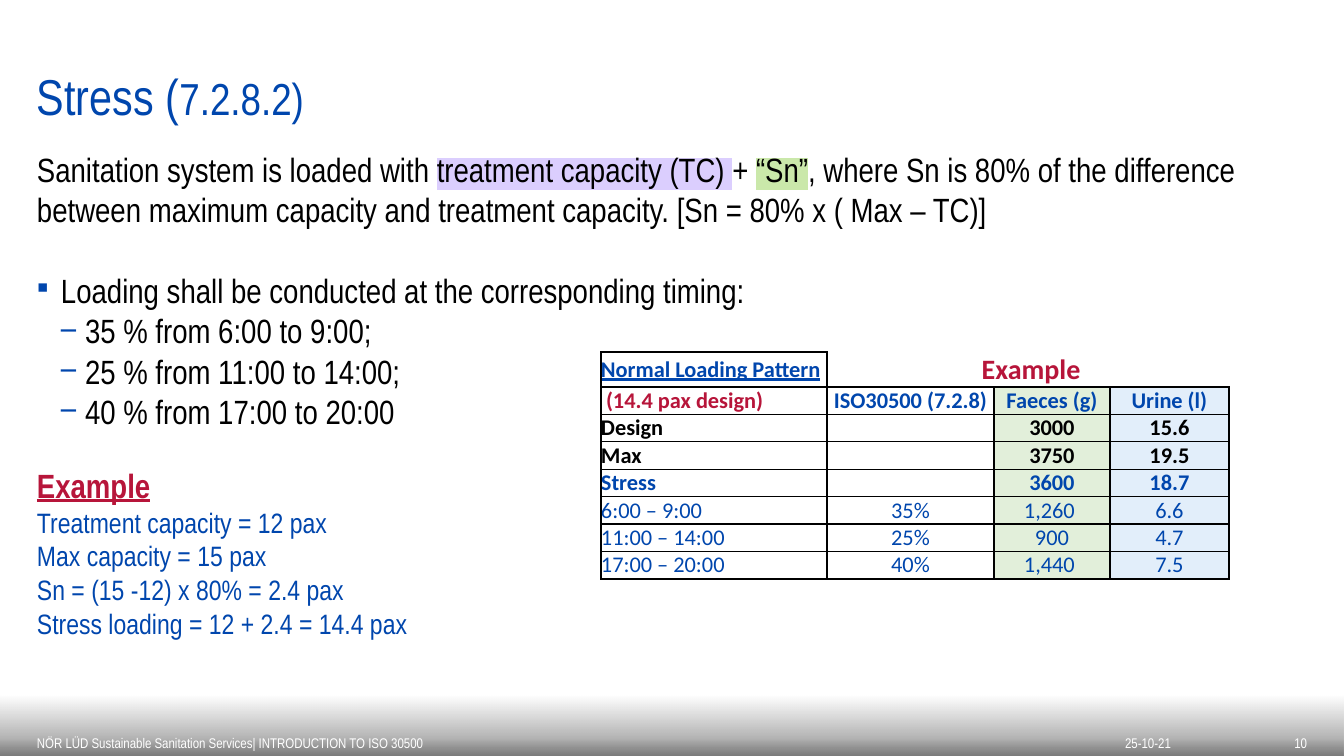
from lxml.etree import SubElement as Sub
from pptx import Presentation
from pptx.dml.color import RGBColor as RGB
from pptx.enum.shapes import MSO_SHAPE as Shape
from pptx.enum.text import MSO_ANCHOR as Anchor, MSO_AUTO_SIZE as Auto, PP_ALIGN as Align
from pptx.oxml import parse_xml
from pptx.oxml.ns import nsdecls, qn
from pptx.util import Emu, Pt

SCALE = 12192000 / 1344
BLUE, RED, BLACK, WHITE = "0046AD", "B7153A", "000000", "FFFFFF"
GREEN, SKY = "E2EFDA", "E2EEFA"


def px(n):
    return Emu(round(n * SCALE))


def rgb(code):
    return RGB.from_string(code)


class Page:
    font = "Arial Narrow"

    def __init__(self, deck):
        self.slide = deck.slides.add_slide(deck.slide_layouts[1])

    def place(self, shape, box):
        shape.left, shape.top, shape.width, shape.height = map(px, box)

    def frame(self, frame, pad, anchor):
        """Set insets (left, top, right, bottom), anchor and wrapping."""
        sides = ("left", "top", "right", "bottom")
        for side, n in zip(sides, pad):
            setattr(frame, "margin_" + side, px(n))
        frame.word_wrap = True
        frame.auto_size = Auto.NONE
        frame.vertical_anchor = anchor
        return frame

    def holder(self, index, box):
        shape = self.slide.placeholders[index]
        self.place(shape, box)
        return self.frame(shape.text_frame, (0, 0, 0, 0), Anchor.TOP)

    def run(self, para, text, size, hue, bold=False, under=False, mark=None, font=None):
        run = para.add_run()
        run.text = text
        style = run.font
        style.size, style.bold, style.underline = Pt(size), bold, under
        style.color.rgb = rgb(hue)
        if mark:
            xml = f'<a:highlight {nsdecls("a")}><a:srgbClr val="{mark}"/></a:highlight>'
            style.fill._xPr.insert(1, parse_xml(xml))
        style.name = font or self.font

    def para(self, frame, runs, gap=0, bullet=None, indent=0, level=0):
        """Add a paragraph of runs with an optional hanging bullet."""
        para = frame.paragraphs[0]
        if para.runs:
            para = frame.add_paragraph()
        para.level = level
        props = para._p.get_or_add_pPr()
        props.set("marL", str(px(indent)))
        props.set("indent", str(px(-24 if bullet else 0)))
        if bullet:
            Sub(Sub(props, qn("a:buClr")), qn("a:srgbClr")).set("val", BLUE)
            Sub(props, qn("a:buFont")).set("typeface", self.font)
            Sub(props, qn("a:buChar")).set("char", bullet)
        else:
            Sub(props, qn("a:buNone"))
        para.space_before, para.space_after, para.line_spacing = Pt(gap), Pt(0), 1.0
        para.alignment = Align.LEFT
        for run in runs:
            self.run(para, *run)

    def small(self, shape, text, align, pad):
        frame = self.frame(shape.text_frame, pad, Anchor.BOTTOM)
        para = frame.paragraphs[0]
        para.alignment = align
        self.run(para, text, 10, WHITE)

    def label(self, box, text, align, pad):
        self.small(self.slide.shapes.add_textbox(*map(px, box)), text, align, pad)

    def band(self, box, text):
        """Add the footer band, fading upwards, with the page number."""
        shape = self.slide.shapes.add_shape(Shape.RECTANGLE, *map(px, box))
        shape.shadow.inherit = False
        shape.line.fill.background()
        stops = "".join(
            f'<a:gs pos="{at}000"><a:srgbClr val="{hue}"><a:alpha val="{seen}000"/></a:srgbClr></a:gs>'
            for at, hue, seen in ((0, "212121", 60), (29, BLACK, 30), (100, BLACK, 0)))
        shape._element.spPr.insert(2, parse_xml(
            f'<a:gradFill {nsdecls("a")} rotWithShape="1"><a:gsLst>{stops}</a:gsLst>'
            '<a:lin ang="16200000" scaled="0"/></a:gradFill>'))
        self.small(shape, text, Align.RIGHT, (37, 5, 37, 5))

    def edges(self, cell, shown):
        props = cell._tc.get_or_add_tcPr()
        for side in "LRTB":
            line = Sub(props, qn("a:ln" + side), w=str(Pt(1)))
            if side in shown:
                Sub(Sub(line, qn("a:solidFill")), qn("a:srgbClr"), val=BLACK)
            else:
                Sub(line, qn("a:noFill"))

    def cell(self, cell, runs, align, fill=None, shown="LRTB"):
        self.edges(cell, shown)
        cell.margin_left = cell.margin_right = cell.margin_top = cell.margin_bottom = 0
        cell.vertical_anchor = Anchor.MIDDLE
        if fill:
            cell.fill.solid()
            cell.fill.fore_color.rgb = rgb(fill)
        else:
            cell.fill.background()
        para = cell.text_frame.paragraphs[0]
        para.alignment = align
        for run in runs:
            self.run(para, *run, font="Calibri")
        if not runs:
            Sub(para._p, qn("a:endParaRPr"), sz="1600")

    def table(self, box, widths, heights, head, rows):
        """Add the table: a first row with a merged caption, then plain rows."""
        shape = self.slide.shapes.add_table(len(heights), len(widths), *map(px, box))
        grid = shape.table
        grid.first_row = grid.horz_banding = False
        for col, n in zip(grid.columns, widths):
            col.width = px(n)
        for row, n in zip(grid.rows, heights):
            row.height = px(n)
        first, caption = head
        grid.cell(0, 1).merge(grid.cell(0, 3))
        self.cell(grid.cell(0, 0), [first], Align.LEFT)
        for c in (1, 2, 3):
            self.cell(grid.cell(0, c), [caption] if c == 1 else [], Align.CENTER,
                      shown="LB" if c == 1 else "B")
        for r, (texts, hue, bold) in enumerate(rows, 1):
            for c, text in enumerate(texts):
                tint = RED if text.startswith(" (") else hue
                runs = [(text, 16, tint, bold)] if text else []
                self.cell(grid.cell(r, c), runs, Align.CENTER if c else Align.LEFT,
                          (None, None, GREEN, SKY)[c])


def main():
    deck = Presentation()
    deck.slide_width, deck.slide_height = px(1344), px(756)
    page = Page(deck)

    title = page.holder(0, (37, 65, 1270, 61))
    page.para(title, [("Stress (", 36, BLUE), ("7.2.8.2)", 32, BLUE)])

    body = page.holder(1, (37, 149, 1270, 546))
    page.para(body, [
        ("Sanitation system is loaded with ", 24, BLACK),
        ("treatment capacity (TC) ", 24, BLACK, False, False, "DBCEFE"),
        ("+ ", 24, BLACK),
        ("“Sn”", 24, BLACK, False, False, "CAE8AA"),
        (", where Sn is 80% of the difference between maximum capacity and "
         "treatment capacity. [Sn = 80% x ( Max – TC)]", 24, BLACK)])
    page.para(body, [("Loading shall be conducted at the corresponding timing:", 24, BLACK)],
              gap=28.8, bullet="▪", indent=24)
    for text in ("35 % from 6:00 to 9:00;", "25 % from 11:00 to 14:00;",
                 "40 % from 17:00 to 20:00"):
        page.para(body, [(text, 24, BLACK)], bullet="–", indent=48, level=1)
    page.para(body, [("Example", 24, RED, True, True)], gap=24)
    for text in ("Treatment capacity = 12 pax", "Max capacity = 15 pax",
                 "Sn = (15 -12) x 80% = 2.4 pax", "Stress loading = 12 + 2.4 = 14.4 pax"):
        page.para(body, [(text, 20, BLUE)])

    page.band((0, 696, 1344, 60), "10")
    page.label((1068, 728, 160, 28), "25-10-21", Align.CENTER, (10, 5, 10, 5))
    page.label((0, 728, 958, 28),
               "NÖR LÜD Sustainable Sanitation Services| INTRODUCTION TO ISO 30500",
               Align.LEFT, (37, 5, 0, 5))

    head = ("Normal Loading Pattern", 16, BLUE, True, True), (" Example", 20, RED, True)
    rows = [
        ((" (14.4 pax design)", "ISO30500 (7.2.8)", "Faeces (g)", "Urine (l)"), BLUE, True),
        (("Design", "", "3000", "15.6"), BLACK, True),
        (("Max", "", "3750", "19.5"), BLACK, True),
        (("Stress", "", "3600", "18.7"), BLUE, True),
        (("6:00 – 9:00", "35%", "1,260 ", "6.6"), BLUE, False),
        (("11:00 – 14:00", "25%", "900", "4.7"), BLUE, False),
        (("17:00 – 20:00", "40%", "1,440 ", "7.5"), BLUE, False)]
    page.table((601, 352, 628, 224), (226, 167, 116, 119), [35] + [27] * 7, head, rows)
    deck.save("out.pptx")


if __name__ == "__main__":
    main()
